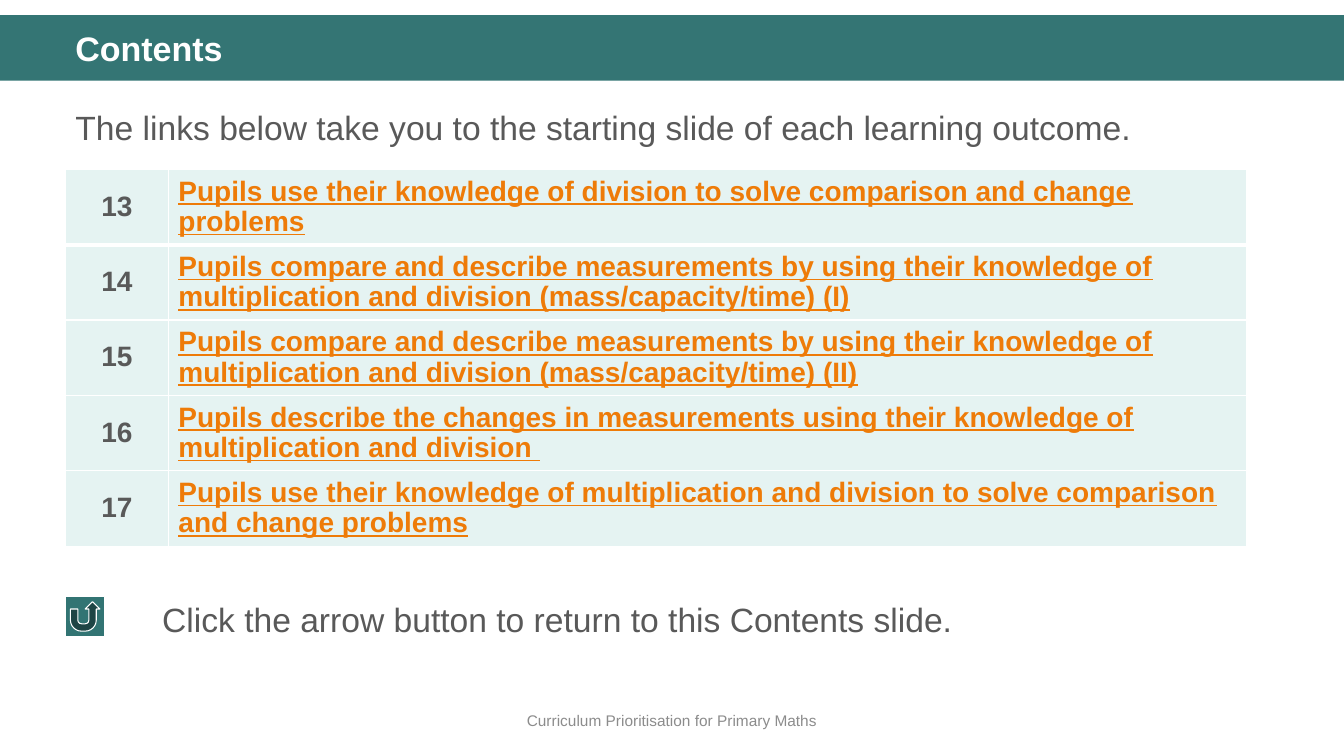
from dataclasses import dataclass

from lxml.etree import SubElement
from pptx import Presentation
from pptx.dml.color import RGBColor
from pptx.enum.shapes import MSO_SHAPE
from pptx.enum.text import MSO_ANCHOR, PP_ALIGN
from pptx.oxml.ns import qn
from pptx.util import Pt

SCALE = 9144
TEAL, GREY, WHITE = "347574", "595959", "FFFFFF"
ORANGE, MINT = "EE7B08", "E5F3F2"


@dataclass
class Label:
    text: str
    box: tuple[int, int, int, int]
    size: float = 24
    color: str = GREY
    bold: bool = False
    align: PP_ALIGN = PP_ALIGN.LEFT
    anchor: MSO_ANCHOR = MSO_ANCHOR.TOP
    lead: float = 1.0


@dataclass
class Block:
    kind: MSO_SHAPE
    box: tuple[int, int, int, int]
    fill: str
    line: str = ""


@dataclass
class Topic:
    number: int
    title: str


BLOCKS = [
    Block(MSO_SHAPE.RECTANGLE, (0, 15, 1333, 65), TEAL),
    Block(MSO_SHAPE.ACTION_BUTTON_RETURN, (65, 592, 39, 39), "327473", WHITE),
]
LABELS = [
    Label("Contents", (65, 27, 1218, 47), 24.3, WHITE, True, lead=0.9),
    Label("The links below take you to the starting slide of each learning outcome.",
          (65, 93, 1218, 60), lead=1.2),
    Label("Click the arrow button to return to this Contents slide.",
          (151, 589, 1132, 50)),
    Label("Curriculum Prioritisation for Primary Maths", (0, 695, 1333, 40),
          11, "8C8C8C", align=PP_ALIGN.CENTER, anchor=MSO_ANCHOR.MIDDLE),
]
TITLES = [
    "Pupils use their knowledge of division to solve comparison and change problems",
    "Pupils compare and describe measurements by using their knowledge of "
    "multiplication and division (mass/capacity/time) (I)",
    "Pupils compare and describe measurements by using their knowledge of "
    "multiplication and division (mass/capacity/time) (II)",
    "Pupils describe the changes in measurements using their knowledge of "
    "multiplication and division ",
    "Pupils use their knowledge of multiplication and division to solve "
    "comparison and change problems",
]
TOPICS = [Topic(number, title) for number, title in enumerate(TITLES, 13)]


def px(value: int) -> int:
    return value * SCALE


def place(box: tuple[int, int, int, int]) -> list[int]:
    return [px(value) for value in box]


def rgb(value: str) -> RGBColor:
    return RGBColor.from_string(value)


def style(para, size: float, color: str, bold: bool) -> None:
    font = para.font
    font.name, font.size, font.bold = "Arial", Pt(size), bold
    font.color.rgb = rgb(color)


def add_block(slide, block: Block) -> None:
    shape = slide.shapes.add_shape(block.kind, *place(block.box))
    shape.shadow.inherit = False
    shape.fill.solid()
    shape.fill.fore_color.rgb = rgb(block.fill)
    if block.line:
        shape.line.color.rgb = rgb(block.line)
        shape.line.width = Pt(0.75)
    else:
        shape.line.fill.background()


def add_label(slide, label: Label) -> None:
    frame = slide.shapes.add_textbox(*place(label.box)).text_frame
    frame.word_wrap = True
    frame.vertical_anchor = label.anchor
    para = frame.paragraphs[0]
    para.text = label.text
    para.alignment = label.align
    para.line_spacing = label.lead
    style(para, label.size, label.color, label.bold)


def add_edge(cell, side: str, width: float) -> None:
    props = cell._tc.get_or_add_tcPr()
    line = SubElement(props, qn(f"a:ln{side}"), w=str(Pt(width)))
    fill = SubElement(line, qn("a:solidFill"))
    SubElement(fill, qn("a:srgbClr"), val=WHITE)


def fill_cell(cell, text: str, color: str, row: int) -> None:
    for side in "LRTB":
        thick = (side, row) in (("B", 0), ("T", 1))
        add_edge(cell, side, 3 if thick else 1)
    cell.fill.solid()
    cell.fill.fore_color.rgb = rgb(MINT)
    cell.vertical_anchor = MSO_ANCHOR.MIDDLE
    para = cell.text_frame.paragraphs[0]
    para.text = text
    para.line_spacing = 0.97
    style(para, 20, color, True)


def add_topics(slide, topics: list[Topic]) -> None:
    box = place((65, 168, 1171, 72 * len(topics)))
    table = slide.shapes.add_table(len(topics), 2, *box).table
    table.first_row = table.horz_banding = False
    for column, width in zip(table.columns, (102, 1069)):
        column.width = px(width)
    for row, topic in enumerate(topics):
        number, title = table.cell(row, 0), table.cell(row, 1)
        fill_cell(number, str(topic.number), GREY, row)
        number.text_frame.paragraphs[0].alignment = PP_ALIGN.CENTER
        fill_cell(title, topic.title, ORANGE, row)
        title.text_frame.paragraphs[0].font.underline = True


def main() -> None:
    deck = Presentation()
    deck.slide_width, deck.slide_height = px(1333), px(750)
    slide = deck.slides.add_slide(deck.slide_layouts[6])
    for block in BLOCKS:
        add_block(slide, block)
    for label in LABELS:
        add_label(slide, label)
    add_topics(slide, TOPICS)
    deck.save("out.pptx")


if __name__ == "__main__":
    main()
